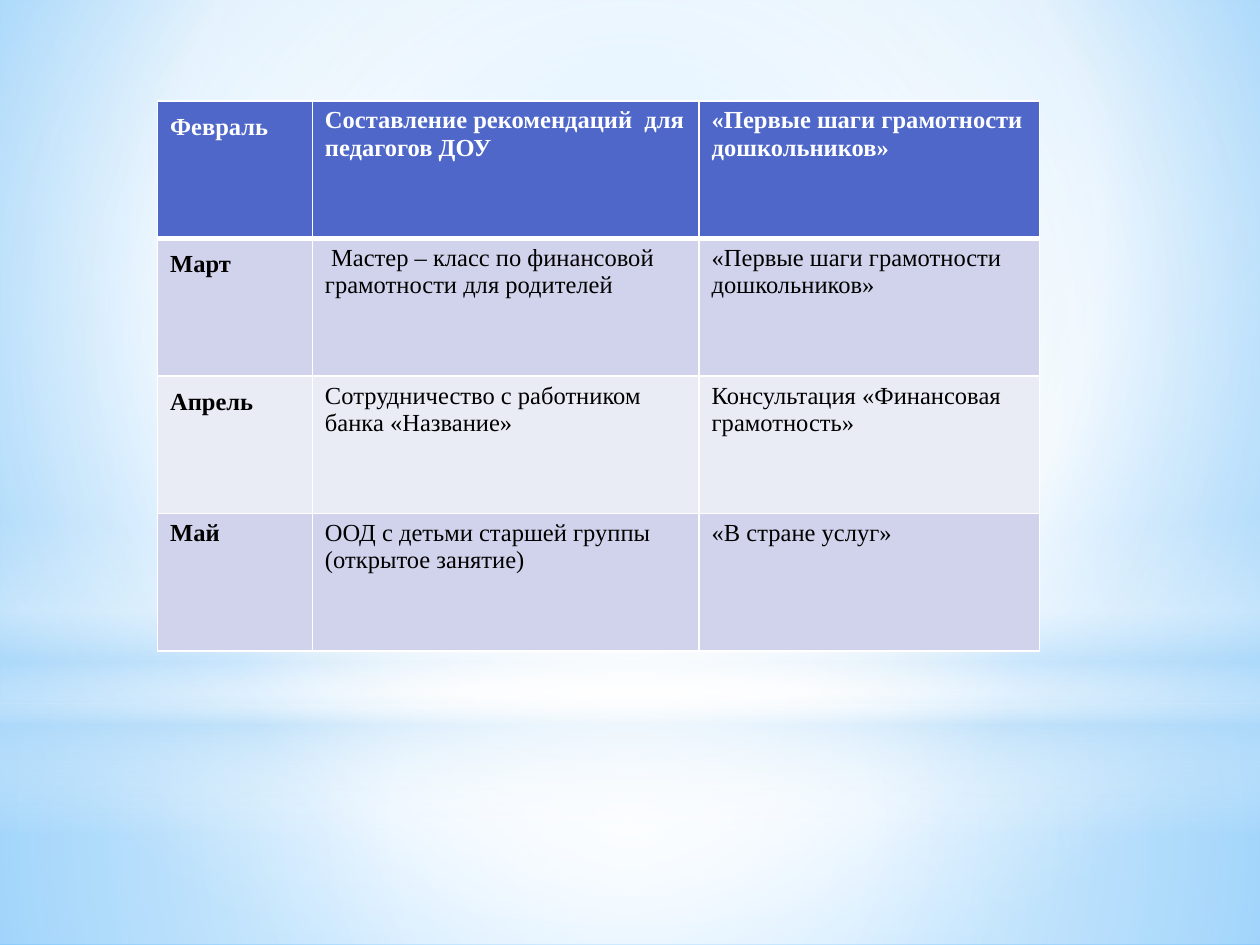
from pptx import Presentation
from pptx.dml.color import RGBColor as RGB
from pptx.enum.shapes import MSO_SHAPE as Kind
from pptx.oxml import parse_xml
from pptx.oxml.ns import nsdecls, qn
from pptx.util import Pt

WHITE, SKY = "FFFFFF", "B4DCFA"
BLUE, DARK, PALE = "4E67C8", "D0D3EB", "E9EBF5"


def shade(fill, props, stops, focus=None):
    """Fill with stops (place, colour, opacity), round a focus or downward."""
    fill.solid()
    marks = "".join(
        f'<a:gs pos="{at * 1000}"><a:srgbClr val="{tint}">'
        f'<a:alpha val="{seen * 1000}"/></a:srgbClr></a:gs>'
        for at, tint, seen in stops)
    way = '<a:lin ang="5400000" scaled="0"/>'
    if focus:
        box = " ".join(f'{k}="{v * 1000}"' for k, v in zip("ltrb", focus))
        way = f'<a:path path="circle"><a:fillToRect {box}/></a:path>'
    old = props.find(qn("a:solidFill"))
    props.replace(old, parse_xml(
        f'<a:gradFill {nsdecls("a")} rotWithShape="1">'
        f'<a:gsLst>{marks}</a:gsLst>{way}</a:gradFill>'))


def paint(fill, tint):
    fill.solid()
    fill.fore_color.rgb = RGB.from_string(tint)


deck = Presentation()
deck.slide_width, deck.slide_height = Pt(720), Pt(540)
slide = deck.slides.add_slide(deck.slide_layouts[6])

# Background
back = slide.background.fill
back.solid()
props = slide.element.find(".//" + qn("p:bgPr"))
shade(back, props, [(0, "9ED5FF", 100), (60, WHITE, 100), (100, "5BB9FF", 100)],
      (20, 10, 20, 60))

# Soft light: floor, wall, horizon band, glow
mid = (50, 50, 50, 50)
lights = [
    (Kind.RECTANGLE, 402, 138,
     [(0, WHITE, 91), (37, WHITE, 76), (100, SKY, 79)], mid),
    (Kind.RECTANGLE, 0, 402,
     [(0, WHITE, 89), (48, WHITE, 62), (100, SKY, 79)], mid),
    (Kind.RECTANGLE, 297, 180,
     [(0, WHITE, 0), (29, WHITE, 30), (45, SKY, 40), (55, WHITE, 26),
      (65, SKY, 60), (100, WHITE, 0)], None),
    (Kind.OVAL, 126, 402, [(0, WHITE, 100), (56, WHITE, 0)], mid),
]
for kind, top, high, stops, focus in lights:
    light = slide.shapes.add_shape(kind, 0, Pt(top), Pt(720), Pt(high))
    light.shadow.inherit = False
    light.line.fill.background()
    shade(light.fill, light.element.spPr, stops, focus)

# Plan by month
plan = [
    ("Февраль", "Составление рекомендаций  для педагогов ДОУ",
     "«Первые шаги грамотности дошкольников»"),
    ("Март", " Мастер – класс по финансовой грамотности для родителей",
     "«Первые шаги грамотности дошкольников»"),
    ("Апрель", "Сотрудничество с работником банка «Название»",
     "Консультация «Финансовая грамотность»"),
    ("Май", "ООД с детьми старшей группы (открытое занятие)",
     "«В стране услуг»"),
]
table = slide.shapes.add_table(4, 3, Pt(90), Pt(57.6), Pt(504), Pt(314.6)).table
for col, wide in zip(table.columns, (88.5, 221, 194.5)):
    col.width = Pt(wide)
for row in table.rows:
    row.height = Pt(78.65)

for r, texts in enumerate(plan):
    for c, text in enumerate(texts):
        cell = table.cell(r, c)
        # The first three months sit a little lower
        cell.margin_top = Pt(7.2 if c == 0 and r < 3 else 3.6)

        # White borders, thick under the header
        for side in "LRTB":
            thick = (r, side) in ((0, "B"), (1, "T"))
            cell._tc.get_or_add_tcPr().append(parse_xml(
                f'<a:ln{side} {nsdecls("a")} w="{Pt(3 if thick else 1)}">'
                f'<a:solidFill><a:srgbClr val="{WHITE}"/></a:solidFill>'
                f'</a:ln{side}>'))
        paint(cell.fill, BLUE if r == 0 else DARK if r % 2 else PALE)

        run = cell.text_frame.paragraphs[0].add_run()
        run.text = text
        run.font.name = "Times New Roman"
        run.font.size = Pt(14)
        run.font.bold = r == 0 or c == 0
        paint(run.font.fill, WHITE if r == 0 else "000000")

deck.save("out.pptx")
